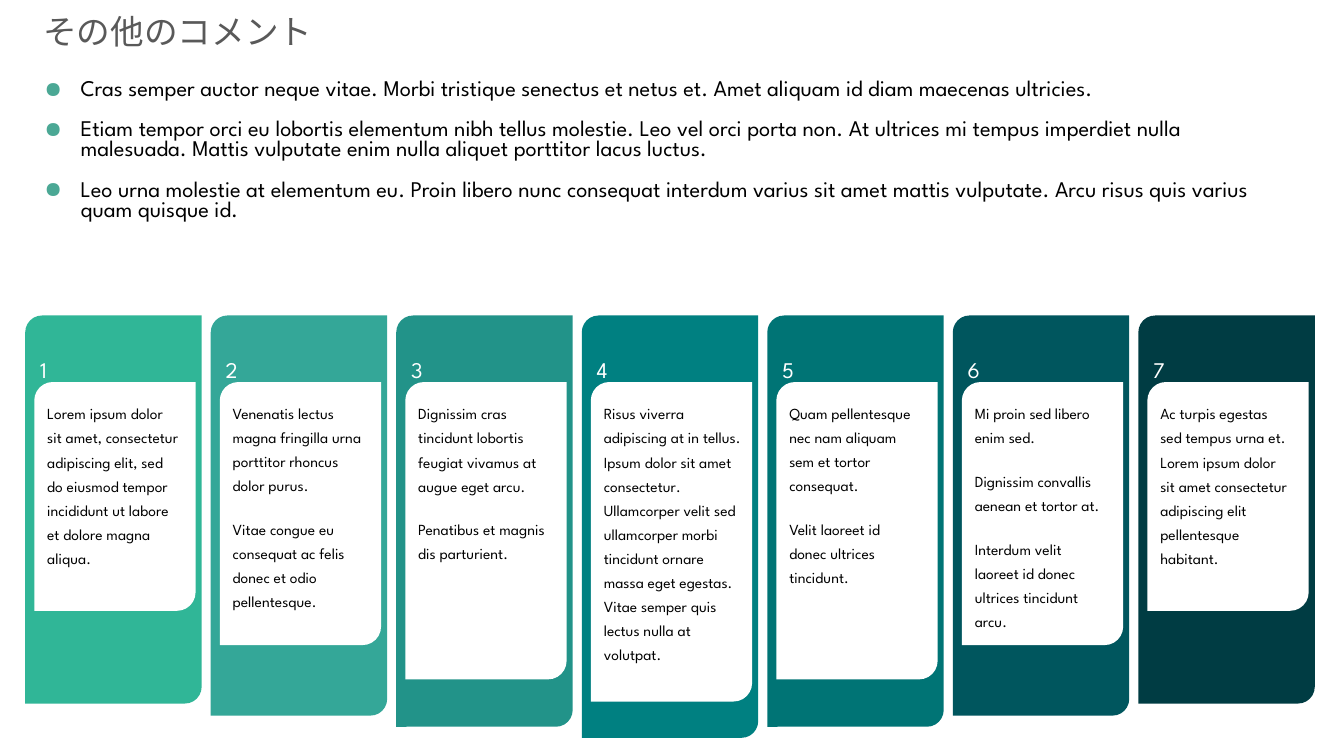
from dataclasses import dataclass

from lxml import etree
from pptx import Presentation
from pptx.dml.color import RGBColor
from pptx.enum.shapes import MSO_SHAPE
from pptx.enum.text import MSO_ANCHOR, MSO_AUTO_SIZE, PP_ALIGN
from pptx.oxml.ns import qn
from pptx.util import Emu, Pt

CARD_SHAPE = MSO_SHAPE.ROUND_2_DIAG_RECTANGLE
TOP, LEFT = MSO_ANCHOR.TOP, PP_ALIGN.LEFT
GROW = MSO_AUTO_SIZE.SHAPE_TO_FIT_TEXT
FIXED = MSO_AUTO_SIZE.NONE
EMU_PER_PX = 9144  # 100 px to the inch


@dataclass(frozen=True)
class Theme:
    font: str = "League Spartan"
    title: str = "595959"
    text: str = "000000"
    white: str = "FFFFFF"
    bullet: str = "4BA895"
    title_size: int = 24
    list_size: int = 16
    number_size: int = 16
    card_size: int = 11
    para_gap: int = 14


@dataclass(frozen=True)
class Card:
    color: str
    height: int
    panel_height: int
    text_width: int
    text_height: int
    paragraphs: tuple[str, ...]


THEME = Theme()
TITLE = "その他のコメント"
COMMENTS = (
    "Cras semper auctor neque vitae. Morbi tristique senectus et netus et. "
    "Amet aliquam id diam maecenas ultricies.",
    "Etiam tempor orci eu lobortis elementum nibh tellus molestie. Leo vel orci porta non. "
    "At ultrices mi tempus imperdiet nulla malesuada. "
    "Mattis vulputate enim nulla aliquet porttitor lacus luctus.",
    "Leo urna molestie at elementum eu. Proin libero nunc consequat interdum varius sit amet "
    "mattis vulputate. Arcu risus quis varius quam quisque id.",
)
CARDS = (
    Card("30B697", 385, 227, 150, 215, (
        "Lorem ipsum dolor sit amet, consectetur adipiscing elit, sed do eiusmod tempor "
        "incididunt ut labore et dolore magna aliqua.",)),
    Card("34A798", 397, 261, 156, 234, (
        "Venenatis lectus magna fringilla urna porttitor rhoncus dolor purus.",
        "Vitae congue eu consequat ac felis donec et odio pellentesque.")),
    Card("229389", 408, 295, 147, 178, (
        "Dignissim cras tincidunt lobortis feugiat vivamus at augue eget arcu.",
        "Penatibus et magnis dis parturient.")),
    Card("008081", 419, 317, 160, 232, (
        "Risus viverra adipiscing at in tellus. Ipsum dolor sit amet consectetur. "
        "Ullamcorper velit sed ullamcorper morbi tincidunt ornare massa eget egestas. "
        "Vitae semper quis lectus nulla at volutpat.",)),
    Card("007475", 408, 295, 150, 216, (
        "Quam pellentesque nec nam aliquam sem et tortor consequat.",
        "Velit laoreet id donec ultrices tincidunt.")),
    Card("00565E", 397, 261, 150, 216, (
        "Mi proin sed libero enim sed.",
        "Dignissim convallis aenean et tortor at.",
        "Interdum velit laoreet id donec ultrices tincidunt arcu.")),
    Card("003C43", 385, 227, 150, 158, (
        "Ac turpis egestas sed tempus urna et. Lorem ipsum dolor sit amet consectetur "
        "adipiscing elit pellentesque habitant.",)),
)
CARD_LEFT, CARD_TOP, CARD_WIDTH, CARD_PITCH = 25, 313, 175, 184
PANEL_TOP, PANEL_WIDTH, PANEL_INSET = 379, 160, 9
TEXT_TOP, TEXT_INSET = 391, 12
CARD_ROUNDING, PANEL_ROUNDING = 0.095, 0.115
CARD_SPACING = 1.3


def px(n: int) -> Emu:
    return Emu(n * EMU_PER_PX)


def apply(target, **values) -> None:
    for name, value in values.items():
        setattr(target, name, value)


def write(tf, paragraphs: tuple[str, ...], size: int, color: str,
          spacing: float = 1.0, gap: int = 0) -> None:
    for i, text in enumerate(paragraphs):
        p = tf.add_paragraph() if i else tf.paragraphs[0]
        apply(p, alignment=LEFT, line_spacing=spacing, space_after=Pt(gap))
        r = p.add_run()
        r.text = text
        apply(r.font, name=THEME.font, size=Pt(size))
        r.font.color.rgb = RGBColor.from_string(color)


def add_bullet(p) -> None:
    pPr = p._p.get_or_add_pPr()
    pPr.set("marL", str(px(50)))
    pPr.set("indent", str(px(-36)))
    color = etree.SubElement(pPr, qn("a:buClr"))
    etree.SubElement(color, qn("a:srgbClr"), val=THEME.bullet)
    etree.SubElement(pPr, qn("a:buChar"), char="●")


def add_block(s, x: int, y: int, w: int, h: int, color: str, rounding: float):
    sp = s.shapes.add_shape(CARD_SHAPE, px(x), px(y), px(w), px(h))
    sp.adjustments[0] = rounding
    sp.adjustments[1] = 0
    sp.shadow.inherit = False
    sp.fill.solid()
    sp.fill.fore_color.rgb = RGBColor.from_string(color)
    sp.line.fill.background()
    return sp


def add_card(s, number: int, card: Card) -> None:
    x = CARD_LEFT + (number - 1) * CARD_PITCH
    # Coloured back with its number
    sp = add_block(s, x, CARD_TOP, CARD_WIDTH, card.height, card.color, CARD_ROUNDING)
    apply(sp.text_frame, vertical_anchor=TOP, margin_top=px(27))
    write(sp.text_frame, (str(number),), THEME.number_size, THEME.white, CARD_SPACING)
    # White panel
    add_block(s, x + PANEL_INSET, PANEL_TOP, PANEL_WIDTH, card.panel_height,
              THEME.white, PANEL_ROUNDING)
    # Card text
    tb = s.shapes.add_textbox(px(x + TEXT_INSET), px(TEXT_TOP),
                              px(card.text_width), px(card.text_height))
    apply(tb.text_frame, word_wrap=True, auto_size=GROW)
    write(tb.text_frame, card.paragraphs, THEME.card_size, THEME.text,
          CARD_SPACING, THEME.para_gap)


def add_comments(s) -> None:
    table = s.shapes.add_table(1, 1, px(0), px(60), px(1309), px(212)).table
    apply(table, first_row=False, horz_banding=False)
    cell = table.cell(0, 0)
    cell.fill.background()
    apply(cell, margin_left=px(30), margin_right=px(30),
          margin_top=px(20), margin_bottom=px(20))
    write(cell.text_frame, COMMENTS, THEME.list_size, THEME.text, gap=THEME.para_gap)
    for p in cell.text_frame.paragraphs:
        add_bullet(p)
    # No cell borders
    tcPr = cell._tc.get_or_add_tcPr()
    for i, side in enumerate(("lnL", "lnR", "lnT", "lnB")):
        ln = etree.Element(qn(f"a:{side}"), w="0")
        etree.SubElement(ln, qn("a:noFill"))
        tcPr.insert(i, ln)


def add_title(s) -> None:
    sp = s.shapes.title
    apply(sp, left=px(33), top=px(10), width=px(431), height=px(50))
    apply(sp.text_frame, vertical_anchor=TOP, word_wrap=True, auto_size=FIXED)
    write(sp.text_frame, (TITLE,), THEME.title_size, THEME.title, 0.9)


def main() -> None:
    prs = Presentation()
    apply(prs, slide_width=px(1333), slide_height=px(750))
    s = prs.slides.add_slide(prs.slide_layouts[5])
    add_title(s)
    add_comments(s)
    for number, card in enumerate(CARDS, 1):
        add_card(s, number, card)
    prs.save("out.pptx")


if __name__ == "__main__":
    main()
